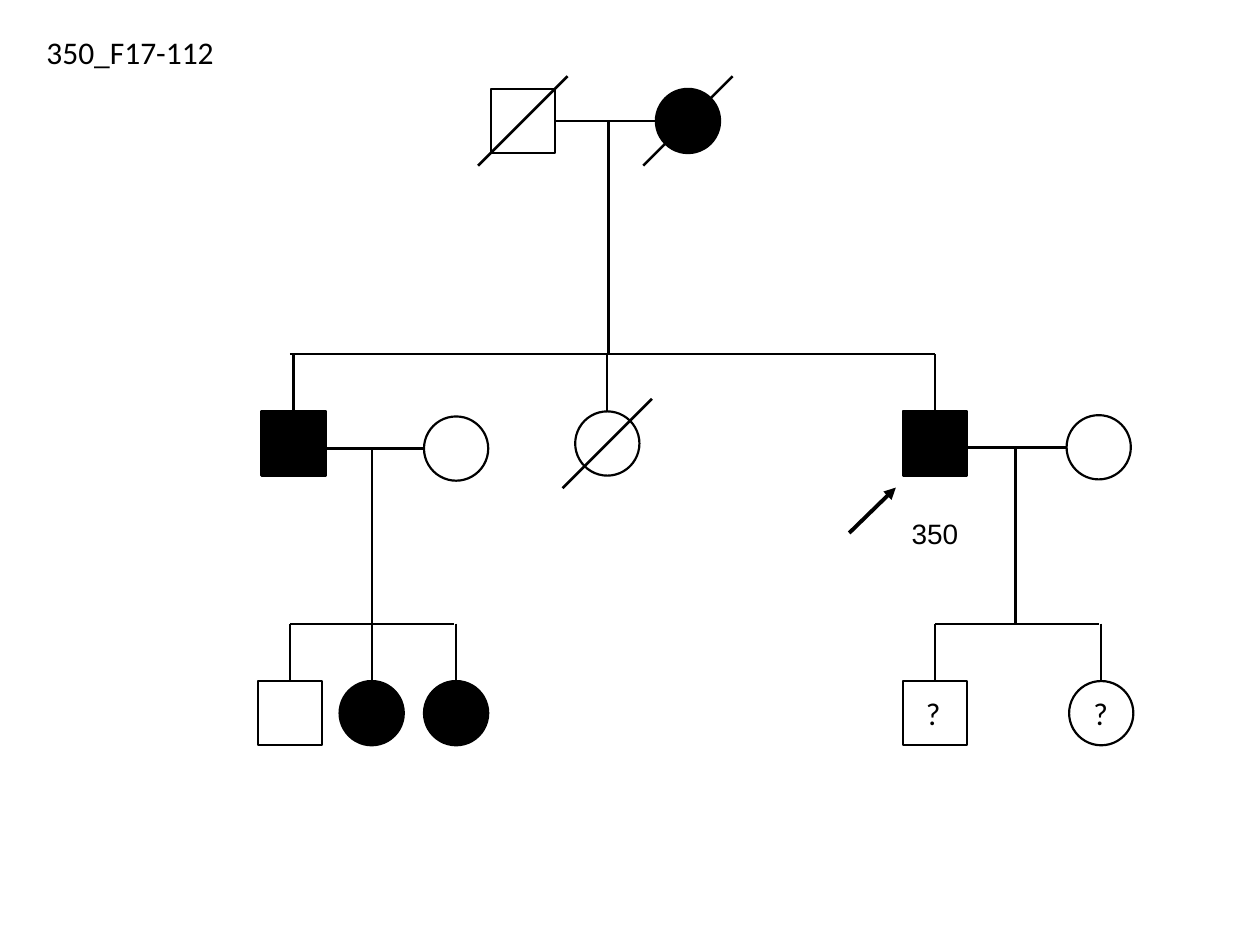
import pptx
import pptx.util
import pptx.dml.color
import pptx.enum.shapes
import pptx.enum.text
import pptx.oxml.ns
from lxml import etree

Inches = pptx.util.Inches
SHAPE = pptx.enum.shapes.MSO_SHAPE
ALIGN = pptx.enum.text.PP_ALIGN
BLACK = pptx.dml.color.RGBColor(0, 0, 0)
WHITE = pptx.dml.color.RGBColor(255, 255, 255)

SIZE = 0.51     # side of every symbol
SLASH = 0.355   # half extent of a deceased mark
THIN, THICK, ARROW = 1.25, 1.5, 2.25

# Generation rows (symbol centres) and sibling bars
ROW1, ROW2, ROW3 = 0.96, 3.52, 5.66
BAR2, BAR3 = 2.81, 4.95

# Symbols: sex, centre x, centre y, fill, deceased
PEOPLE = [
    ("male", 4.15, ROW1, WHITE, True),
    ("female", 5.46, ROW1, BLACK, True),
    ("male", 2.33, ROW2, BLACK, False),
    ("female", 3.62, 3.56, None, False),
    ("female", 4.82, ROW2, None, True),
    ("male", 7.42, ROW2, BLACK, False),
    ("female", 8.72, 3.55, None, False),
    ("male", 2.3, ROW3, None, False),
    ("female", 2.95, ROW3, BLACK, False),
    ("female", 3.62, ROW3, BLACK, False),
    ("male", 7.42, ROW3, None, False),
    ("female", 8.74, ROW3, None, False),
]

# Couples: left end, right end, y
COUPLES = [(4.4, 5.2, ROW1), (2.57, 3.37, 3.56), (7.67, 8.47, 3.55)]

# Families: descent x, descent top, descent bottom, bar y, bar ends,
# children x, children top
FAMILIES = [
    (4.83, ROW1, BAR2, BAR2, (2.3, 7.42), (2.33, 4.82, 7.42), 3.26),
    (2.95, 3.56, BAR3, BAR3, (2.3, 3.6), (2.3, 2.95, 3.62), 5.41),
    (8.06, 3.55, BAR3, BAR3, (7.42, 8.72), (7.42, 8.74), 5.41),
]

# Labels: text, box, format
LABELS = [
    ("350_F17-112", (0.27, 0.21, 1.54, 0.4), {}),
    ("350", (7.13, 4.05, 0.58, 0.37),
     {"size": 16, "font": "Arial", "align": ALIGN.CENTER}),
    ("?", (7.25, 5.46, 0.32, 0.4), {}),
    ("?", (8.58, 5.46, 0.32, 0.4), {}),
]

prs = pptx.Presentation()
prs.slide_width, prs.slide_height = Inches(10), Inches(7.5)
s = prs.slides.add_slide(prs.slide_layouts[6])


def add_line(x1, y1, x2, y2, width=THIN, arrow=False):
    c = s.shapes.add_connector(pptx.enum.shapes.MSO_CONNECTOR.STRAIGHT,
                               *map(Inches, (x1, y1, x2, y2)))
    c.line.color.rgb = BLACK
    c.line.width = pptx.util.Pt(width)
    qn = pptx.oxml.ns.qn
    if arrow:
        etree.SubElement(c.line._get_or_add_ln(), qn("a:tailEnd"), type="triangle")
    etree.SubElement(c._element.spPr, qn("a:effectLst"))


def add_person(sex, x, y, fill, deceased):
    kind = SHAPE.RECTANGLE if sex == "male" else SHAPE.OVAL
    sp = s.shapes.add_shape(kind, Inches(x - SIZE / 2), Inches(y - SIZE / 2),
                            Inches(SIZE), Inches(SIZE))
    sp.shadow.inherit = False
    if fill is None:
        sp.fill.background()
    else:
        sp.fill.solid()
        sp.fill.fore_color.rgb = fill
    sp.line.color.rgb = BLACK
    sp.line.width = pptx.util.Pt(THIN)
    if deceased:
        add_line(x - SLASH, y + SLASH, x + SLASH, y - SLASH, THICK)


def add_text(text, box, size=18, font="Calibri", align=ALIGN.LEFT):
    tf = s.shapes.add_textbox(*map(Inches, box)).text_frame
    tf.word_wrap = False
    tf.auto_size = pptx.enum.text.MSO_AUTO_SIZE.SHAPE_TO_FIT_TEXT
    p = tf.paragraphs[0]
    p.alignment = align
    r = p.add_run()
    r.text = text
    r.font.size = pptx.util.Pt(size)
    r.font.name = font
    r.font.color.rgb = BLACK


# Relationship lines
for left, right, y in COUPLES:
    add_line(left, y, right, y, THICK)
for x, top, bottom, bar, (left, right), children, child_top in FAMILIES:
    add_line(x, top, x, bottom)
    add_line(left, bar, right, bar)
    for child in children:
        add_line(child, bar, child, child_top)

# Family members
for person in PEOPLE:
    add_person(*person)

# Proband arrow and labels
add_line(6.74, 4.23, 7.11, 3.87, ARROW, arrow=True)
for text, box, style in LABELS:
    add_text(text, box, **style)

prs.save("out.pptx")
